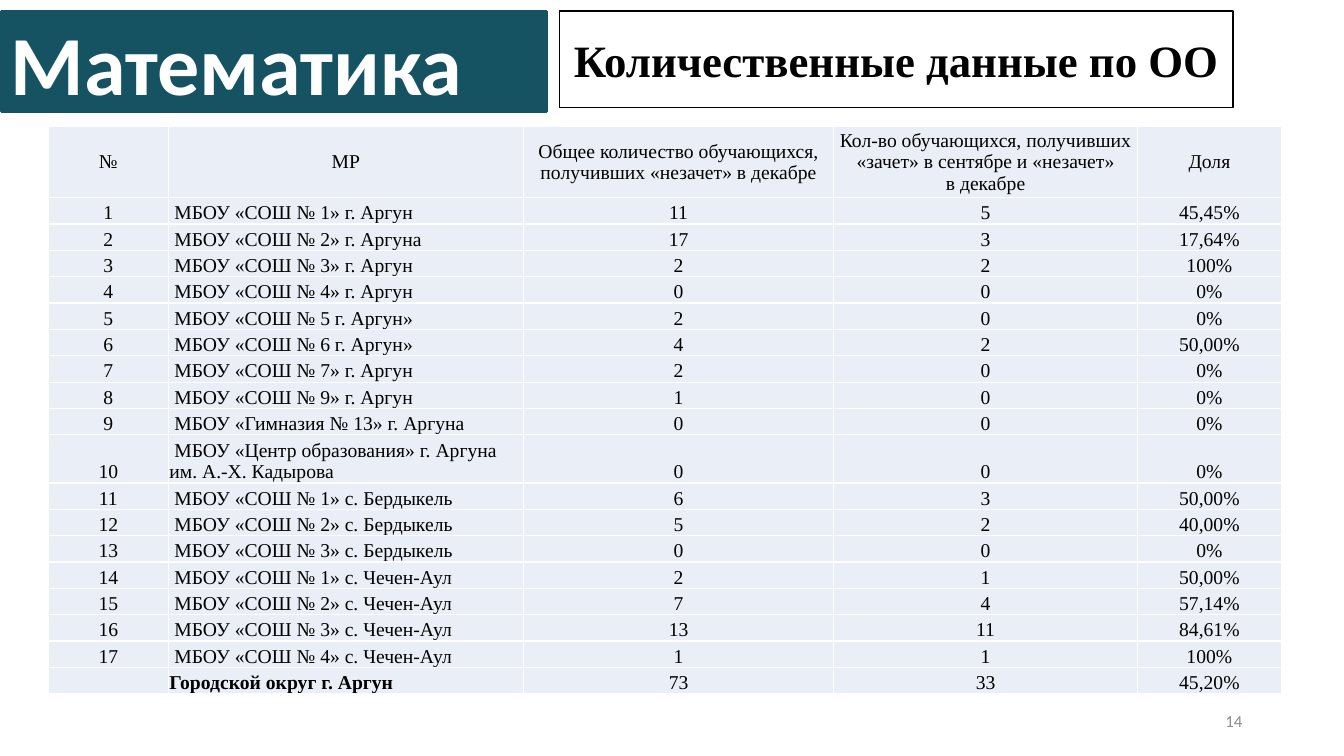
import pptx
import pptx.dml.color
import pptx.enum.shapes
import pptx.enum.text
import pptx.oxml
import pptx.oxml.ns
import pptx.util

COLORS = {"teal": "155262", "white": "FFFFFF", "black": "000000",
          "grey": "8C8C8C", "cell": "EAEFF7"}
ALIGN = pptx.enum.text.PP_ALIGN
ANCHOR = pptx.enum.text.MSO_ANCHOR
SERIF, SANS = "Times New Roman", "Calibri"

HEADINGS = [
    "№", "МР",
    "Общее количество обучающихся, получивших «незачет» в декабре",
    "Кол-во обучающихся, получивших «зачет» в сентябре и «незачет»\nв декабре",
    "Доля",
]
SCHOOLS = [
    ("«СОШ № 1» г. Аргун", 11, 5, "45,45%"),
    ("«СОШ № 2» г. Аргуна", 17, 3, "17,64%"),
    ("«СОШ № 3» г. Аргун", 2, 2, "100%"),
    ("«СОШ № 4» г. Аргун", 0, 0, "0%"),
    ("«СОШ № 5 г. Аргун»", 2, 0, "0%"),
    ("«СОШ № 6 г. Аргун»", 4, 2, "50,00%"),
    ("«СОШ № 7» г. Аргун", 2, 0, "0%"),
    ("«СОШ № 9» г. Аргун", 1, 0, "0%"),
    ("«Гимназия № 13» г. Аргуна", 0, 0, "0%"),
    ("«Центр образования» г. Аргуна им. А.-Х. Кадырова", 0, 0, "0%"),
    ("«СОШ № 1» с. Бердыкель", 6, 3, "50,00%"),
    ("«СОШ № 2» с. Бердыкель", 5, 2, "40,00%"),
    ("«СОШ № 3» с. Бердыкель", 0, 0, "0%"),
    ("«СОШ № 1» с. Чечен-Аул", 2, 1, "50,00%"),
    ("«СОШ № 2» с. Чечен-Аул", 7, 4, "57,14%"),
    ("«СОШ № 3» с. Чечен-Аул", 13, 11, "84,61%"),
    ("«СОШ № 4» с. Чечен-Аул", 1, 1, "100%"),
]
TOTAL = ["", "Городской округ г. Аргун", 73, 33, "45,20%"]
TWO_LINE_ROW = 10


class SlideBuilder:
    """Draws styled elements on a slide split into 100 columns and 100 rows."""

    def __init__(self, deck):
        self.slide = deck.slides.add_slide(deck.slide_layouts[6])
        self.column = deck.slide_width / 100
        self.row = deck.slide_height / 100

    def place(self, left, top, width, height):
        return (round(left * self.column), round(top * self.row),
                round(width * self.column), round(height * self.row))

    def color(self, name):
        return pptx.dml.color.RGBColor.from_string(COLORS[name])

    def set_text(self, frame, text, size, font, color="black", bold=False, align=ALIGN.LEFT):
        frame.text = text
        frame.word_wrap = True
        for paragraph in frame.paragraphs:
            paragraph.alignment = align
            paragraph.font.size = pptx.util.Pt(size)
            paragraph.font.name = font
            paragraph.font.bold = bold
            paragraph.font.color.rgb = self.color(color)
            if not text:
                paragraph._p.get_or_add_endParaRPr().set("sz", str(size * 100))

    def banner(self, area, text, fill, line, line_width, **style):
        banner = self.slide.shapes.add_shape(
            pptx.enum.shapes.MSO_SHAPE.RECTANGLE, *self.place(*area))
        banner.shadow.inherit = False
        banner.fill.solid()
        banner.fill.fore_color.rgb = self.color(fill)
        banner.line.color.rgb = self.color(line)
        banner.line.width = pptx.util.Pt(line_width)
        banner.text_frame.vertical_anchor = ANCHOR.MIDDLE
        self.set_text(banner.text_frame, text, bold=True, **style)

    def label(self, area, text, **style):
        label = self.slide.shapes.add_textbox(*self.place(*area))
        label.text_frame.vertical_anchor = ANCHOR.MIDDLE
        self.set_text(label.text_frame, text, **style)

    def border(self, cell, color):
        properties = cell._tc.get_or_add_tcPr()
        namespace = pptx.oxml.ns.nsdecls("a")
        for position, side in enumerate(("lnL", "lnR", "lnT", "lnB")):
            properties.insert(position, pptx.oxml.parse_xml(
                f'<a:{side} {namespace} w="12700"><a:solidFill>'
                f'<a:srgbClr val="{COLORS[color]}"/></a:solidFill></a:{side}>'))

    def table(self, left, top, widths, heights, records):
        area = self.place(left, top, sum(widths), sum(heights))
        table = self.slide.shapes.add_table(len(heights), len(widths), *area).table
        for column, width in zip(table.columns, widths):
            column.width = round(width * self.column)
        for row, height in zip(table.rows, heights):
            row.height = round(height * self.row)
        last = len(records) - 1
        for r, record in enumerate(records):
            for c, value in enumerate(record):
                cell = table.cell(r, c)
                cell.fill.solid()
                cell.fill.fore_color.rgb = self.color("cell")
                cell.margin_left = cell.margin_right = pptx.util.Inches(0.01)
                cell.margin_top, cell.margin_bottom = pptx.util.Inches(0.01), 0
                cell.vertical_anchor = ANCHOR.BOTTOM if r else ANCHOR.MIDDLE
                self.border(cell, "white")
                self.set_text(cell.text_frame, str(value), 14, SERIF,
                              bold=r == last and c == 1,
                              align=ALIGN.LEFT if r and c == 1 else ALIGN.CENTER)


def main():
    deck = pptx.Presentation()
    deck.slide_width = pptx.util.Inches(13.33)
    deck.slide_height = pptx.util.Inches(7.5)
    builder = SlideBuilder(deck)

    builder.banner((0.08, 1.47, 40.59, 13.33), "Математика", "teal", "teal", 2.25,
                   size=60, font=SANS, color="white")
    builder.banner((41.64, 1.47, 50.11, 12.8), "Количественные данные по ОО",
                   "white", "black", 1, size=32, font=SERIF, align=ALIGN.CENTER)
    builder.label((70.67, 92.67, 22.5, 5.33), "14",
                  size=12, font=SANS, color="grey", align=ALIGN.RIGHT)

    numbered = [[number, f" МБОУ {name}", *values]
                for number, (name, *values) in enumerate(SCHOOLS, 1)]
    records = [HEADINGS, *numbered, TOTAL]
    heights = [9.2] + [3.49] * (len(records) - 1)
    heights[TWO_LINE_ROW] = 5.87
    builder.table(3.6, 16.67, [8.93, 26.41, 23.11, 22.58, 10.73], heights, records)

    deck.save("out.pptx")


if __name__ == "__main__":
    main()
